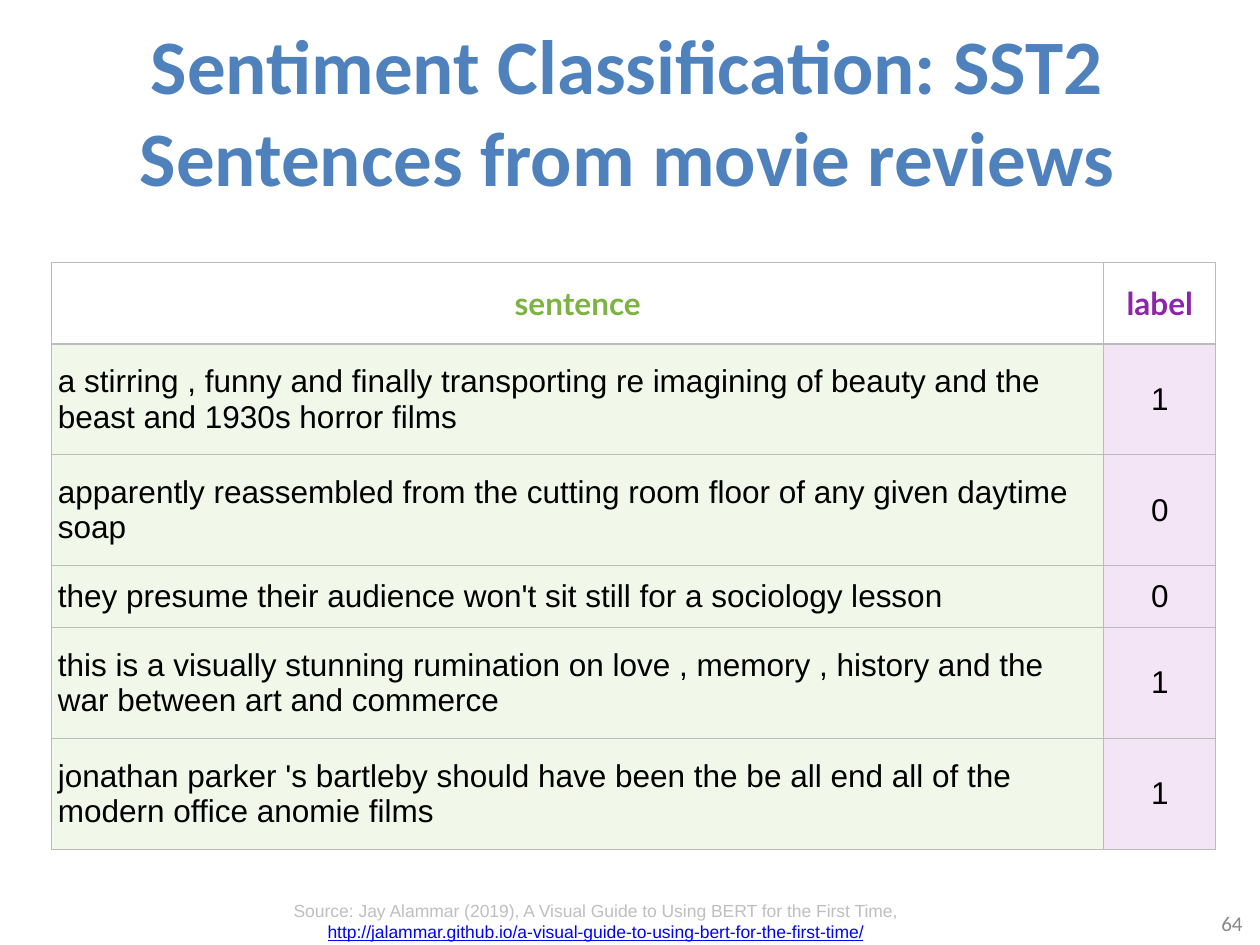
from lxml.etree import SubElement
from pptx import Presentation
from pptx.dml.color import RGBColor
from pptx.enum.text import MSO_ANCHOR, PP_ALIGN
from pptx.oxml.ns import qn
from pptx.util import Inches, Pt

COLORS = {
    "title": "4F81BD",
    "number": "898989",
    "source": "BFBFBF",
    "link": "0000FF",
    "border": "BBBBBB",
    "white": "FFFFFF",
    "black": "000000",
    "sentence": "7CB342",
    "label": "8E24AA",
    "sentence_fill": "F1F8E9",
    "label_fill": "F3E5F5",
}

REVIEWS = [
    ("a stirring , funny and finally transporting re imagining of beauty and the beast and 1930s horror films", "1"),
    ("apparently reassembled from the cutting room floor of any given daytime soap", "0"),
    ("they presume their audience won't sit still for a sociology lesson", "0"),
    ("this is a visually stunning rumination on love , memory , history and the war between art and commerce", "1"),
    ("jonathan parker 's bartleby should have been the be all end all of the modern office anomie films", "1"),
]
COLUMN_WIDTHS = (8.35, 0.89)
ROW_HEIGHTS = (0.65, 0.88, 0.88, 0.49, 0.88, 0.88)


class SlideBuilder:
    title = {"name": "Calibri", "size": Pt(44), "bold": True, "color": "title"}
    number = {"name": "Calibri", "size": Pt(12), "color": "number"}
    source = {"name": "Arial", "size": Pt(10), "color": "source"}
    link = {**source, "color": "link", "underline": True}
    header = {"name": "Lato", "size": Pt(18), "bold": True}
    body = {"name": "Arial", "size": Pt(18), "bold": False, "color": "black"}

    def __init__(self, slide):
        self.slide = slide

    def add_lines(self, text_frame, lines, align):
        """Put (text, style) lines into one paragraph, split by line breaks."""
        paragraph = text_frame.paragraphs[0]
        paragraph.alignment = align
        for index, (text, style) in enumerate(lines):
            if index:
                paragraph.add_line_break()
            run = paragraph.add_run()
            run.text = text
            for name, value in style.items():
                if name == "color":
                    run.font.color.rgb = RGBColor.from_string(COLORS[value])
                else:
                    setattr(run.font, name, value)

    def text(self, box, lines, align=PP_ALIGN.CENTER, anchor=MSO_ANCHOR.MIDDLE):
        shape = self.slide.shapes.add_textbox(*map(Inches, box))
        shape.text_frame.word_wrap = True
        shape.text_frame.vertical_anchor = anchor
        self.add_lines(shape.text_frame, lines, align)

    def border(self, cell):
        properties = cell._tc.get_or_add_tcPr()
        for side in ("lnL", "lnR", "lnT", "lnB"):
            line = SubElement(properties, qn(f"a:{side}"), w=str(Pt(0.75)))
            fill = SubElement(line, qn("a:solidFill"))
            SubElement(fill, qn("a:srgbClr"), val=COLORS["border"])

    def cell(self, cell, text, style, fill, align, margins):
        self.border(cell)
        cell.fill.solid()
        cell.fill.fore_color.rgb = RGBColor.from_string(COLORS[fill])
        cell.vertical_anchor = MSO_ANCHOR.MIDDLE
        horizontal, vertical = map(Inches, margins)
        cell.margin_left = cell.margin_right = horizontal
        cell.margin_top = cell.margin_bottom = vertical
        self.add_lines(cell.text_frame, [(text, style)], align)

    def review_table(self, left, top):
        box = (left, top, sum(COLUMN_WIDTHS), sum(ROW_HEIGHTS))
        table = self.slide.shapes.add_table(
            len(ROW_HEIGHTS), len(COLUMN_WIDTHS), *map(Inches, box)
        ).table
        for column, width in zip(table.columns, COLUMN_WIDTHS):
            column.width = Inches(width)
        for row, height in zip(table.rows, ROW_HEIGHTS):
            row.height = Inches(height)
        body_alignments = (PP_ALIGN.LEFT, PP_ALIGN.CENTER)
        for index, (name, align) in enumerate(zip(("sentence", "label"), body_alignments)):
            self.cell(table.cell(0, index), name, {**self.header, "color": name},
                      "white", PP_ALIGN.CENTER, (0.1, 0.1))
            for row, review in enumerate(REVIEWS, start=1):
                self.cell(table.cell(row, index), review[index], self.body,
                          f"{name}_fill", align, (0.05, 0.04))


def main():
    presentation = Presentation()
    presentation.slide_width = Inches(10)
    presentation.slide_height = Inches(7.5)
    builder = SlideBuilder(presentation.slides.add_slide(presentation.slide_layouts[6]))

    builder.text((0.43, 0.1, 9.1, 1.54), [
        ("Sentiment Classification: SST2", builder.title),
        ("Sentences from movie reviews", builder.title),
    ])
    builder.text((7.63, 7.13, 2.33, 0.4), [("64", builder.number)], PP_ALIGN.RIGHT)
    builder.text((1.22, 7.09, 7.01, 0.44), [
        ("Source: Jay Alammar (2019), A Visual Guide to Using BERT for the First Time,", builder.source),
        ("http://jalammar.github.io/a-visual-guide-to-using-bert-for-the-first-time/", builder.link),
    ], anchor=MSO_ANCHOR.TOP)
    builder.review_table(0.41, 2.08)

    presentation.save("out.pptx")


if __name__ == "__main__":
    main()
